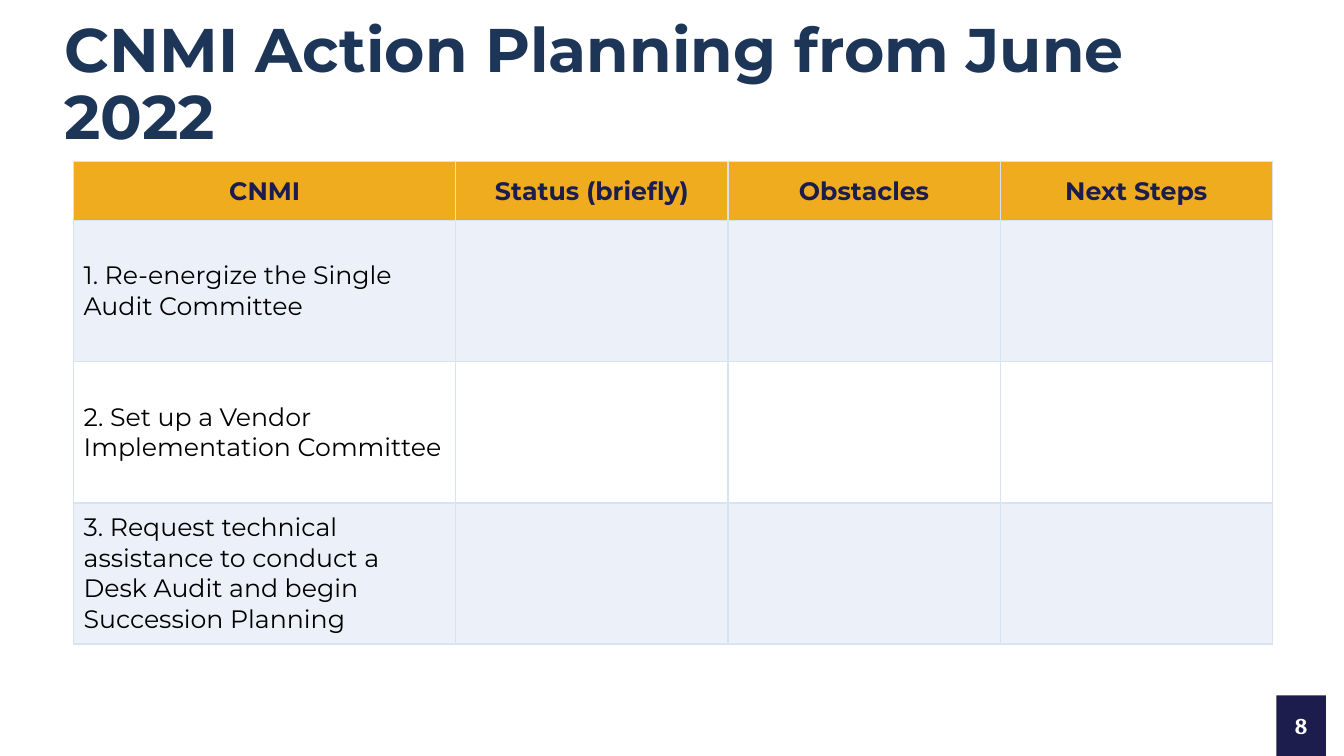
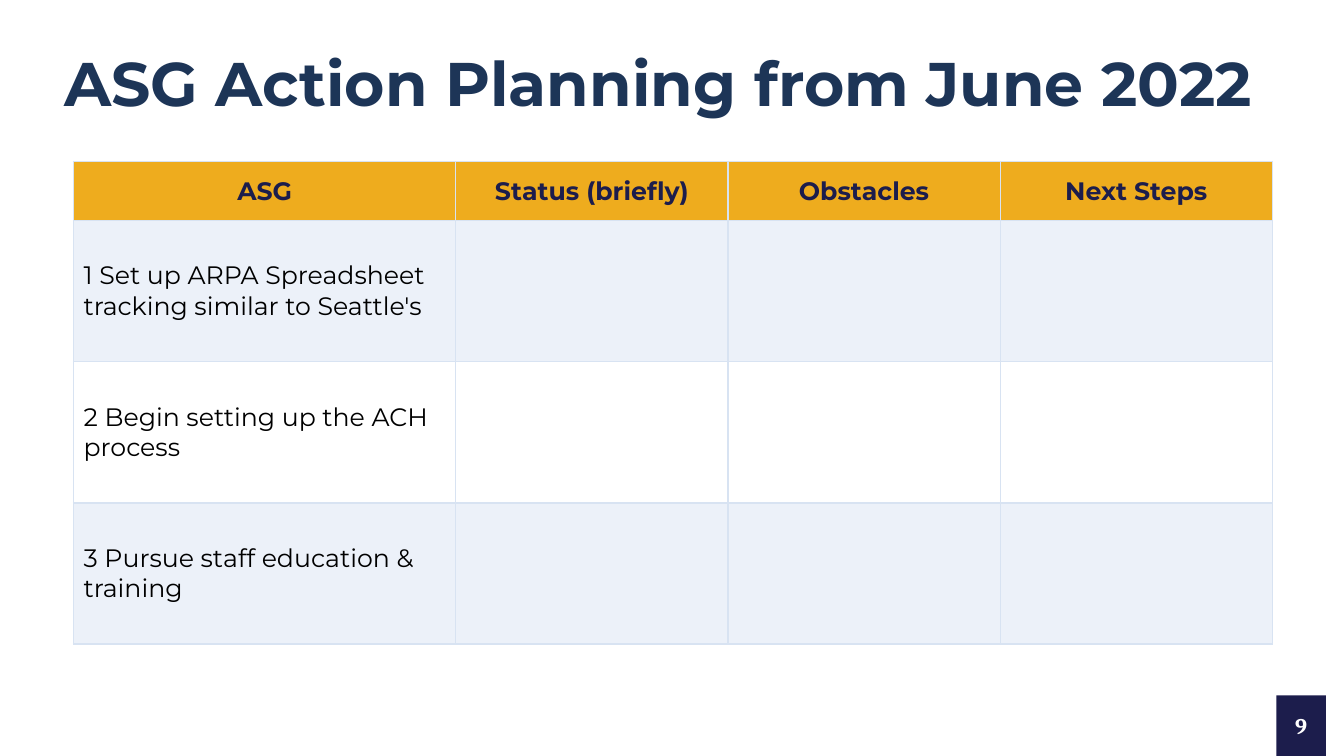
"""Build the action planning slides, one status table per territory."""
from lxml import etree
from pptx import Presentation
from pptx.dml.color import RGBColor
from pptx.enum.shapes import MSO_SHAPE
from pptx.enum.text import MSO_ANCHOR, PP_ALIGN
from pptx.oxml.ns import qn
from pptx.util import Inches, Pt

RECTANGLE = MSO_SHAPE.RECTANGLE
MIDDLE = MSO_ANCHOR.MIDDLE
LEFT, CENTER = PP_ALIGN.LEFT, PP_ALIGN.CENTER

THEME = {
    "navy": RGBColor.from_string("1C1D4C"),
    "gold": RGBColor.from_string("EEAC1E"),
    "band": RGBColor.from_string("ECF1F9"),
    "border": "D8E3F2",
    "title": {"name": "Montserrat", "size": Pt(44), "bold": True,
              "color": RGBColor.from_string("1D3557")},
    "header": {"name": "Montserrat", "size": Pt(18), "bold": True,
               "color": RGBColor.from_string("1C1D4C")},
    "body": {"name": "Montserrat", "size": Pt(18), "bold": False,
             "color": RGBColor.from_string("000000")},
    "number": {"name": "Cambria", "size": Pt(16), "bold": True,
               "color": RGBColor.from_string("FFFFFF")},
}

COLUMN_WIDTHS = [3.79, 2.7, 2.7, 2.7]
ROW_HEIGHTS = [0.59, 1.4, 1.4, 1.4]
STATUS_HEADERS = ["Status (briefly)", "Obstacles", "Next Steps"]
FIRST_NUMBER = 8
PLANS = {
    "CNMI": [
        "1. Re-energize the Single Audit Committee",
        "2. Set up a Vendor Implementation Committee",
        "3. Request technical assistance to conduct a Desk Audit and begin Succession Planning",
    ],
    "ASG": [
        "1 Set up ARPA Spreadsheet tracking similar to Seattle's",
        "2 Begin setting up the ACH process",
        "3 Pursue staff education & training",
    ],
}


def write(frame, text, style, align=LEFT):
    """Put one styled paragraph in a text frame."""
    frame.word_wrap = True
    para = frame.paragraphs[0]
    para.alignment = align
    span = para.add_run()
    span.text = text
    for name, value in THEME[style].items():
        if name == "color":
            span.font.color.rgb = value
        else:
            setattr(span.font, name, value)
    return para


def add_borders(cell):
    """Draw a thin line on all four sides of a cell."""
    properties = cell._tc.get_or_add_tcPr()
    for side in ("lnL", "lnR", "lnT", "lnB"):
        line = etree.SubElement(properties, qn(f"a:{side}"), w=str(Pt(1)))
        fill = etree.SubElement(line, qn("a:solidFill"))
        etree.SubElement(fill, qn("a:srgbClr"), val=THEME["border"])


deck = Presentation()
deck.slide_width, deck.slide_height = Inches(13.33), Inches(7.5)

for number, (territory, actions) in enumerate(PLANS.items(), FIRST_NUMBER):
    page = deck.slides.add_slide(deck.slide_layouts[6])

    title = page.shapes.add_textbox(Inches(0.54), Inches(0.33), Inches(11.99), Inches(1.05))
    title.text_frame.vertical_anchor = MIDDLE
    heading = write(title.text_frame, f"{territory} Action Planning from June 2022", "title")
    heading.line_spacing = 0.9

    rows = [[territory, *STATUS_HEADERS]] + [[action, "", "", ""] for action in actions]
    table = page.shapes.add_table(
        len(ROW_HEIGHTS), len(COLUMN_WIDTHS), Inches(0.73), Inches(1.6),
        Inches(sum(COLUMN_WIDTHS)), Inches(sum(ROW_HEIGHTS))).table
    for column, width in zip(table.columns, COLUMN_WIDTHS):
        column.width = Inches(width)
    for row, height in zip(table.rows, ROW_HEIGHTS):
        row.height = Inches(height)

    for row_index, texts in enumerate(rows):
        is_header = row_index == 0
        style, align = ("header", CENTER) if is_header else ("body", LEFT)
        for column_index, text in enumerate(texts):
            cell = table.cell(row_index, column_index)
            cell.vertical_anchor = MIDDLE
            add_borders(cell)
            if is_header or row_index % 2:
                cell.fill.solid()
                cell.fill.fore_color.rgb = THEME["gold" if is_header else "band"]
            else:
                cell.fill.background()
            if text:
                write(cell.text_frame, text, style, align)

    badge = page.shapes.add_shape(RECTANGLE, Inches(12.66), Inches(6.9), Inches(0.49), Inches(0.6))
    badge.shadow.inherit = False
    badge.fill.solid()
    badge.fill.fore_color.rgb = THEME["navy"]
    badge.line.fill.background()
    badge.text_frame.vertical_anchor = MIDDLE
    write(badge.text_frame, str(number), "number", CENTER)

deck.save("out.pptx")
